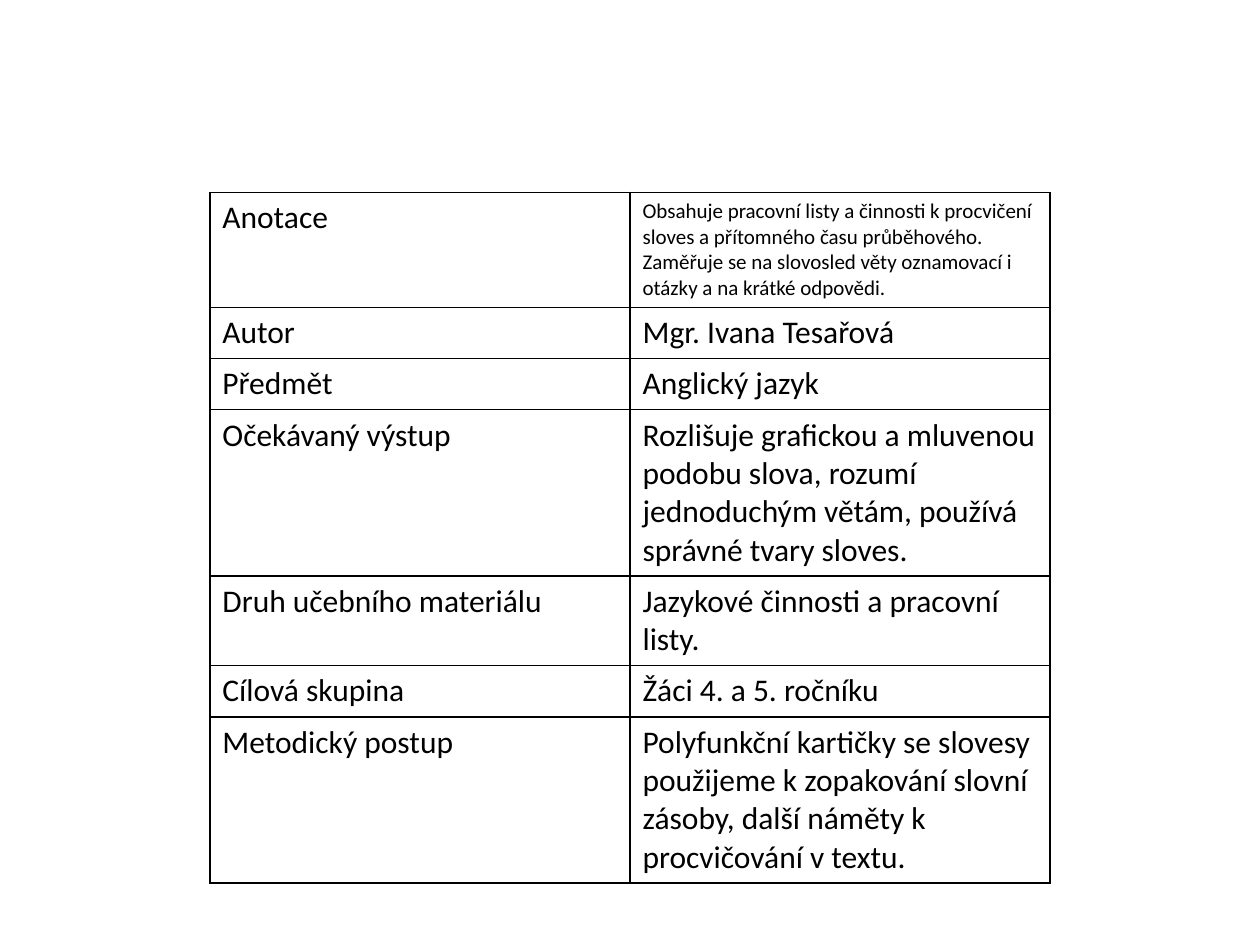
from dataclasses import dataclass

from lxml.etree import SubElement
from pptx import Presentation
from pptx.dml.color import RGBColor
from pptx.oxml.ns import qn
from pptx.util import Cm, Pt

ROWS = [
    ("Anotace", "Obsahuje pracovní listy a činnosti k procvičení sloves a přítomného času průběhového. "
                "Zaměřuje se na slovosled věty oznamovací i otázky a na krátké odpovědi."),
    ("Autor", "Mgr. Ivana Tesařová"),
    ("Předmět", "Anglický jazyk"),
    ("Očekávaný výstup", "Rozlišuje grafickou a mluvenou podobu slova, rozumí jednoduchým větám, "
                         "používá správné tvary sloves."),
    ("Druh učebního materiálu", "Jazykové činnosti a pracovní listy."),
    ("Cílová skupina", "Žáci 4. a 5. ročníku"),
    ("Metodický postup", "Polyfunkční kartičky se slovesy použijeme k zopakování slovní zásoby, "
                         "další náměty k procvičování v textu."),
]


@dataclass(frozen=True)
class Theme:
    font: str = "Calibri"
    ink: str = "000000"
    body_size: int = 18
    annotation_size: int = 12
    border_width: int = 1


THEME = Theme()
SLIDE_WIDTH, SLIDE_HEIGHT = Cm(25.4), Cm(19.05)
TABLE_TOP = Cm(3.88)
COLUMN_WIDTH, ROW_HEIGHT = Cm(8.47), Cm(1.03)


def add_borders(cell):
    properties = cell._tc.get_or_add_tcPr()
    for position, side in enumerate(("lnL", "lnR", "lnT", "lnB")):
        line = properties.makeelement(qn(f"a:{side}"), {"w": str(Pt(THEME.border_width))})
        fill = SubElement(line, qn("a:solidFill"))
        SubElement(fill, qn("a:srgbClr"), val=THEME.ink)
        properties.insert(position, line)


def fill_cell(cell, text, size):
    cell.text_frame.text = text
    font = cell.text_frame.paragraphs[0].runs[0].font
    font.name = THEME.font
    font.size = Pt(size)
    font.bold = False
    font.color.rgb = RGBColor.from_string(THEME.ink)
    cell.fill.background()
    add_borders(cell)


def add_details_table(slide):
    column_count = len(ROWS[0])
    width = COLUMN_WIDTH * column_count
    left = (SLIDE_WIDTH - width) // 2
    table = slide.shapes.add_table(
        len(ROWS), column_count, left, TABLE_TOP, width, ROW_HEIGHT * len(ROWS)
    ).table
    table.first_row = False
    table.horz_banding = False
    for column in table.columns:
        column.width = COLUMN_WIDTH
    for row_index, texts in enumerate(ROWS):
        table.rows[row_index].height = ROW_HEIGHT
        for column_index, text in enumerate(texts):
            is_annotation = (row_index, column_index) == (0, 1)
            size = THEME.annotation_size if is_annotation else THEME.body_size
            fill_cell(table.cell(row_index, column_index), text, size)


def main():
    presentation = Presentation()
    presentation.slide_width = SLIDE_WIDTH
    presentation.slide_height = SLIDE_HEIGHT
    slide = presentation.slides.add_slide(presentation.slide_layouts[6])
    add_details_table(slide)
    presentation.save("out.pptx")


if __name__ == "__main__":
    main()
